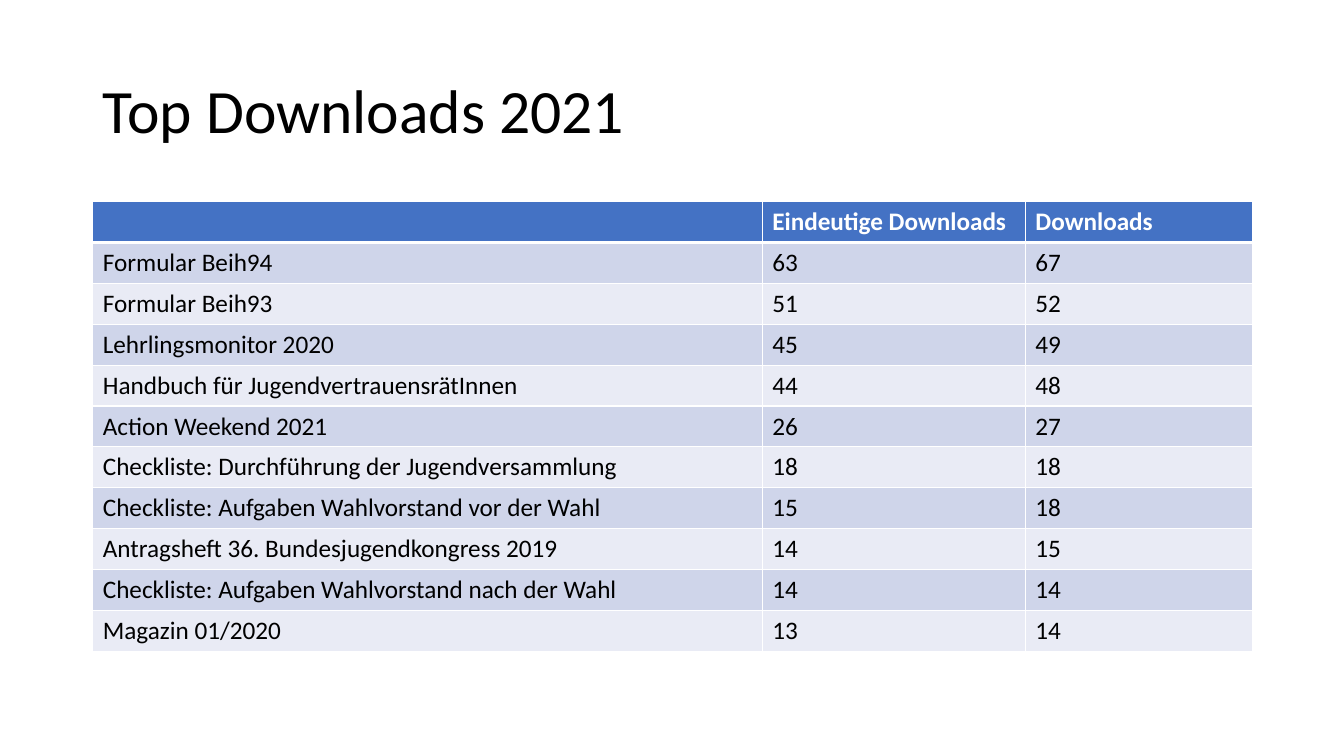
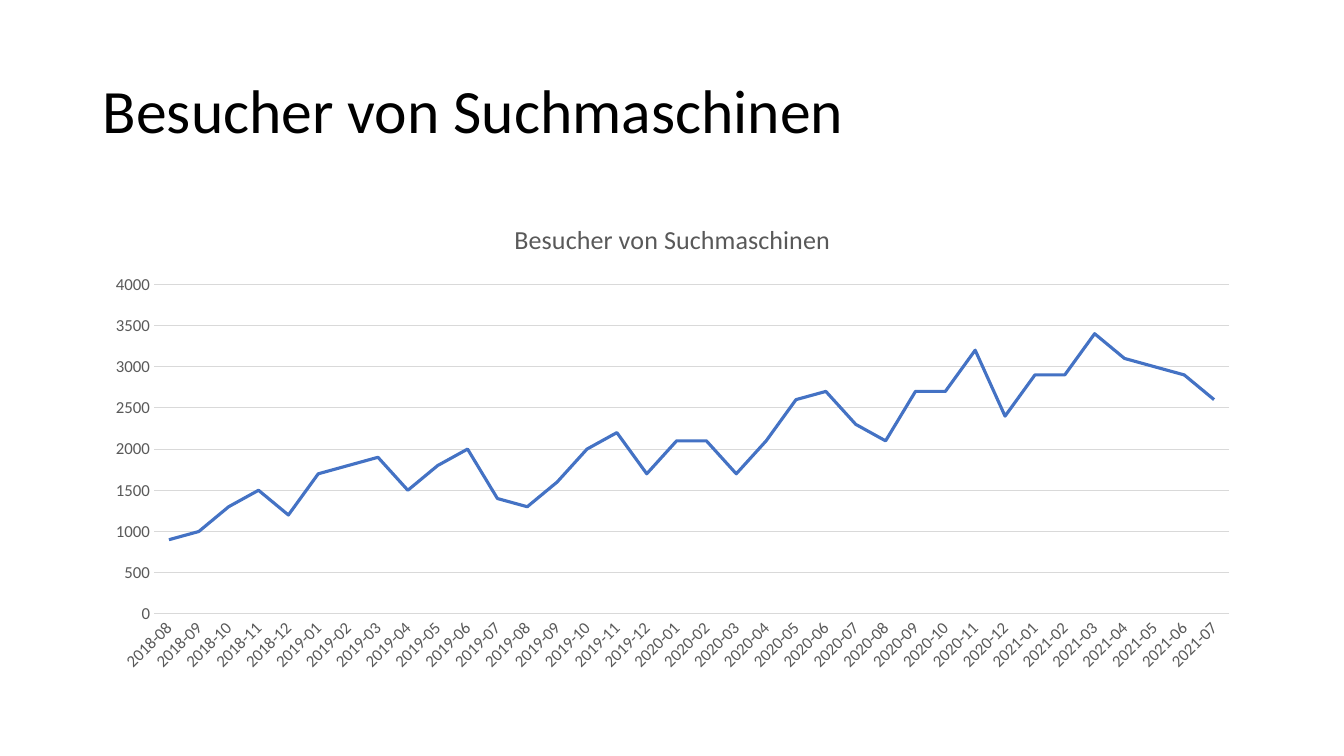
from lxml.etree import SubElement
from pptx import Presentation
from pptx.chart.data import CategoryChartData
from pptx.dml.color import RGBColor
from pptx.enum.chart import XL_CHART_TYPE as ChartType, XL_TICK_MARK as TickMark
from pptx.enum.text import MSO_ANCHOR as Anchor, PP_ALIGN as Align
from pptx.oxml.ns import qn
from pptx.util import Inches, Pt

SLIDE_W, SLIDE_H = 13.33, 7.5
MARGIN = 0.92
CONTENT_W = 11.5
TITLE_TOP, TITLE_H = 0.4, 1.45
BODY_TOP = 2
FONT = "Calibri"
BLACK, WHITE, BLUE = "000000", "FFFFFF", "4472C4"
BANDS = "CFD5EA", "E9EBF5"
GRAY, GRID_GRAY = "595959", "D9D9D9"

COLUMN_WEIGHTS = 6.64, 2.61, 2.25
TABLE_H = 4.46
DOWNLOADS = [
    ("", "Eindeutige Downloads", "Downloads"),
    ("Formular Beih94", 63, 67),
    ("Formular Beih93", 51, 52),
    ("Lehrlingsmonitor 2020", 45, 49),
    ("Handbuch für JugendvertrauensrätInnen", 44, 48),
    ("Action Weekend 2021", 26, 27),
    ("Checkliste: Durchführung der Jugendversammlung", 18, 18),
    ("Checkliste: Aufgaben Wahlvorstand vor der Wahl", 15, 18),
    ("Antragsheft 36. Bundesjugendkongress 2019", 14, 15),
    ("Checkliste: Aufgaben Wahlvorstand nach der Wahl", 14, 14),
    ("Magazin 01/2020", 13, 14),
]

SEARCH_TITLE = "Besucher von Suchmaschinen"
CHART_H = 4.76
FIRST_YEAR, FIRST_MONTH = 2018, 8
VISITORS = [
    900, 1000, 1300, 1500, 1200, 1700, 1800, 1900, 1500, 1800, 2000, 1400,
    1300, 1600, 2000, 2200, 1700, 2100, 2100, 1700, 2100, 2600, 2700, 2300,
    2100, 2700, 2700, 3200, 2400, 2900, 2900, 3400, 3100, 3000, 2900, 2600,
]


def color(hex_code):
    return RGBColor.from_string(hex_code)


def style_font(font, size, hex_code=BLACK, bold=False):
    font.name = FONT
    font.size = Pt(size)
    font.bold = bold
    font.color.rgb = color(hex_code)


def style_line(line, hex_code, width):
    line.color.rgb = color(hex_code)
    line.width = Pt(width)


def write(frame, text, align=Align.LEFT, spacing=None, **font_format):
    paragraph = frame.paragraphs[0]
    paragraph.alignment = align
    paragraph.line_spacing = spacing
    run = paragraph.add_run()
    run.text = text
    style_font(run.font, **font_format)


def add_titled_slide(prs, text):
    slide = prs.slides.add_slide(prs.slide_layouts.get_by_name("Title Only"))
    title = slide.shapes.title
    title.left, title.top = Inches(MARGIN), Inches(TITLE_TOP)
    title.width, title.height = Inches(CONTENT_W), Inches(TITLE_H)
    title.text_frame.vertical_anchor = Anchor.MIDDLE
    write(title.text_frame, text, spacing=0.9, size=44)
    return slide


def set_borders(cell, **widths):
    properties = cell._tc.get_or_add_tcPr()
    for side in "LRTB":
        border = SubElement(properties, qn(f"a:ln{side}"), w=str(Pt(widths.get(side, 1))))
        fill = SubElement(border, qn("a:solidFill"))
        SubElement(fill, qn("a:srgbClr"), val=WHITE)


def fill_cell(cell, value, row):
    header = row == 0
    set_borders(cell, B=3 if header else 1, T=3 if row == 1 else 1)
    cell.fill.solid()
    cell.fill.fore_color.rgb = color(BLUE if header else BANDS[(row - 1) % 2])
    if value != "":
        write(cell.text_frame, str(value), size=18,
              hex_code=WHITE if header else BLACK, bold=header)


def add_download_table(slide):
    downloads = slide.shapes.add_table(
        len(DOWNLOADS), len(COLUMN_WEIGHTS), Inches(MARGIN), Inches(BODY_TOP),
        Inches(CONTENT_W), Inches(TABLE_H)).table
    for column, weight in zip(downloads.columns, COLUMN_WEIGHTS):
        column.width = Inches(CONTENT_W * weight / sum(COLUMN_WEIGHTS))
    for row, values in enumerate(DOWNLOADS):
        for column, value in enumerate(values):
            fill_cell(downloads.cell(row, column), value, row)


def month_label(index):
    years, month = divmod(FIRST_MONTH - 1 + index, 12)
    return f"{FIRST_YEAR + years}-{month + 1:02d}"


def style_axis(axis):
    axis.major_tick_mark = axis.minor_tick_mark = TickMark.NONE
    style_font(axis.tick_labels.font, 12, GRAY)


def add_visitor_chart(slide):
    data = CategoryChartData()
    data.categories = [month_label(index) for index in range(len(VISITORS))]
    data.add_series(SEARCH_TITLE, VISITORS)
    chart = slide.shapes.add_chart(
        ChartType.LINE, Inches(MARGIN), Inches(BODY_TOP),
        Inches(CONTENT_W), Inches(CHART_H), data).chart
    style_font(chart.font, 10)
    chart.has_legend = False
    write(chart.chart_title.text_frame, SEARCH_TITLE, align=Align.CENTER,
          size=18.6, hex_code=GRAY)
    chart.chart_title.include_in_layout = False

    months, counts = chart.category_axis, chart.value_axis
    style_axis(months)
    style_line(months.format.line, GRID_GRAY, 0.75)
    chart.element.xpath(".//c:catAx/c:txPr/a:bodyPr")[0].set("rot", str(-45 * 60000))

    style_axis(counts)
    counts.format.line.fill.background()
    counts.minimum_scale, counts.maximum_scale, counts.major_unit = 0, 4000, 500
    style_line(counts.major_gridlines.format.line, GRID_GRAY, 0.75)

    plot = chart.plots[0]
    plot.vary_by_categories = False
    visitors = plot.series[0]
    visitors.smooth = False
    style_line(visitors.format.line, BLUE, 2.25)


def main():
    prs = Presentation()
    prs.slide_width, prs.slide_height = Inches(SLIDE_W), Inches(SLIDE_H)
    add_download_table(add_titled_slide(prs, "Top Downloads 2021"))
    add_visitor_chart(add_titled_slide(prs, SEARCH_TITLE))
    prs.save("out.pptx")


if __name__ == "__main__":
    main()
